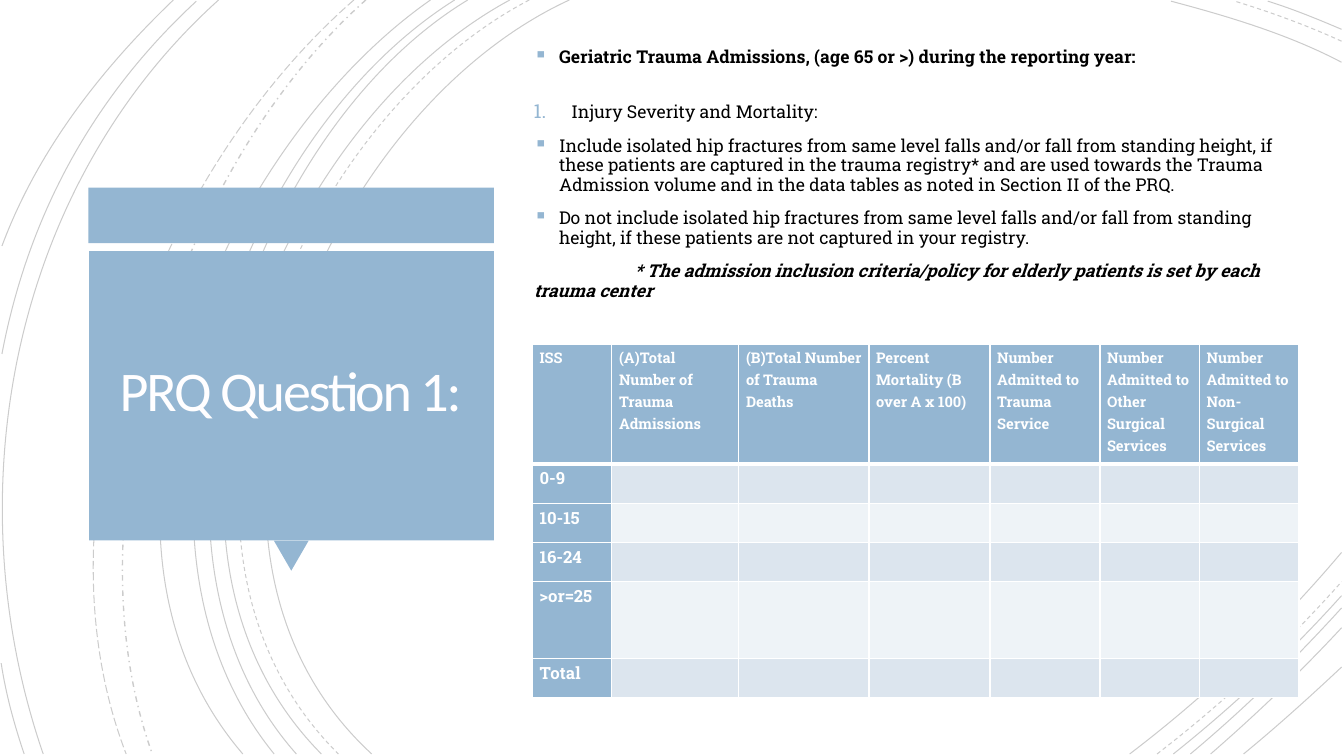
from dataclasses import dataclass

from lxml.etree import SubElement
from pptx import Presentation
from pptx.dml.color import RGBColor
from pptx.enum.dml import MSO_LINE_DASH_STYLE as Dash
from pptx.enum.shapes import MSO_SHAPE as Preset
from pptx.enum.text import MSO_ANCHOR as Anchor, PP_ALIGN as Align
from pptx.oxml.ns import qn
from pptx.util import Cm, Pt


@dataclass(frozen=True)
class Theme:
    """Colours, fonts and type sizes of the slide."""
    accent: str = "94B6D2"
    band_dark: str = "DCE5EE"
    band_light: str = "EEF3F7"
    white: str = "FFFFFF"
    ink: str = "000000"
    title_ink: str = "FFFEFF"
    title_font: str = "Calibri"
    body_font: str = "Roboto Slab"
    title_size: float = 40
    body_size: float = 12.6
    header_size: float = 10.5
    label_size: float = 12


def rgb(code):
    """Return the colour for a six-digit code."""
    return RGBColor.from_string(code)


class SlideBuilder:
    """Draws themed elements on one page."""

    def __init__(self, page, theme):
        """Keep the page and its theme."""
        self.page = page
        self.theme = theme

    def style(self, para, font, size, colour, bold=False, italic=False):
        """Format every run of a paragraph."""
        for span in para.runs:
            span.font.name = font
            span.font.size = Pt(size)
            span.font.color.rgb = rgb(colour)
            span.font.bold = bold
            span.font.italic = italic

    def arc(self, points, dash=Dash.SOLID, weight=0.75):
        """Draw a faint cubic curve through eight coordinates."""
        pairs = [(Cm(x), Cm(y)) for x, y in zip(points[::2], points[1::2])]
        builder = self.page.shapes.build_freeform(*pairs[0])
        builder.add_line_segments(pairs[1:], close=False)
        curve = builder.convert_to_shape()
        curve.shadow.inherit = False
        curve.fill.background()
        curve.line.color.rgb = rgb(self.theme.ink)
        curve.line.width = Pt(weight)
        curve.line.dash_style = dash
        tint = next(curve.element.iter(qn("a:srgbClr")))
        SubElement(tint, qn("a:alpha"), val="20000")
        segments = list(curve.element.iter(qn("a:lnTo")))
        outline = segments[0].getparent()
        bezier = SubElement(outline, qn("a:cubicBezTo"))
        for segment in segments:
            bezier.append(segment[0])
            outline.remove(segment)

    def block(self, preset, left, top, width, height, turn=0):
        """Draw a solid accent shape."""
        shape = self.page.shapes.add_shape(preset, Cm(left), Cm(top), Cm(width), Cm(height))
        shape.rotation = turn
        shape.shadow.inherit = False
        shape.fill.solid()
        shape.fill.fore_color.rgb = rgb(self.theme.accent)
        shape.line.fill.background()

    def frame(self, left, top, width, height):
        """Add a wrapping text box and return its text frame."""
        box = self.page.shapes.add_textbox(Cm(left), Cm(top), Cm(width), Cm(height))
        box.text_frame.word_wrap = True
        return box.text_frame

    def title(self, text, left, top, width, height):
        """Write the centred title."""
        frame = self.frame(left, top, width, height)
        frame.vertical_anchor = Anchor.MIDDLE
        frame.text = text
        para = frame.paragraphs[0]
        para.alignment = Align.CENTER
        para.line_spacing = 0.85
        self.style(para, self.theme.title_font, self.theme.title_size, self.theme.title_ink)
        para.runs[0].font._element.set("spc", "-150")

    def indent(self, para, margin, first, bullet=None):
        """Set the indents and, if given, the bullet of a paragraph."""
        props = para._p.get_or_add_pPr()
        props.set("marL", str(Cm(margin)))
        props.set("indent", str(Cm(first)))
        if bullet is None:
            SubElement(props, qn("a:buNone"))
            return
        colour = SubElement(props, qn("a:buClr"))
        SubElement(colour, qn("a:srgbClr"), val=self.theme.accent)
        SubElement(props, qn("a:buSzPct"), val="110000")
        if bullet == "1.":
            SubElement(props, qn("a:buAutoNum"), type="arabicPeriod")
        else:
            SubElement(props, qn("a:buChar"), char=bullet)

    def body(self, items, left, top, width, height):
        """Write the list of notes."""
        frame = self.frame(left, top, width, height)
        frame.text = "\n".join(item[0] for item in items)
        for para, (_, before, margin, first, bullet, bold, italic) in zip(frame.paragraphs, items):
            para.line_spacing = 0.92
            para.space_before = Pt(before)
            self.indent(para, margin, first, bullet)
            self.style(para, self.theme.body_font, self.theme.body_size,
                       self.theme.ink, bold, italic)

    def cell(self, cell, text, size, fill, top, bottom):
        """Fill one table cell and edge it in white."""
        cell.margin_left = cell.margin_right = Cm(0.18)
        cell.margin_top = cell.margin_bottom = 0
        cell.text = text
        para = cell.text_frame.paragraphs[0]
        para.line_spacing = 1.15
        self.style(para, self.theme.body_font, size, self.theme.white, bold=True)
        props = cell._tc.get_or_add_tcPr()
        for side, weight in (("L", 1), ("R", 1), ("T", top), ("B", bottom)):
            edge = SubElement(props, qn(f"a:ln{side}"), w=str(Pt(weight)))
            paint = SubElement(edge, qn("a:solidFill"))
            SubElement(paint, qn("a:srgbClr"), val=self.theme.white)
        cell.fill.solid()
        cell.fill.fore_color.rgb = rgb(fill)

    def table(self, headers, labels, widths, heights, left, top):
        """Draw the banded table with a header row and a label column."""
        theme = self.theme
        grid = self.page.shapes.add_table(len(heights), len(widths), Cm(left), Cm(top),
                                          Cm(sum(widths)), Cm(sum(heights))).table
        for column, width in zip(grid.columns, widths):
            column.width = Cm(width)
        for row, height in zip(grid.rows, heights):
            row.height = Cm(height)
        rows = [headers] + [[label] + [""] * (len(widths) - 1) for label in labels]
        for i, texts in enumerate(rows):
            band = theme.band_dark if i % 2 else theme.band_light
            for j, text in enumerate(texts):
                self.cell(grid.cell(i, j), text,
                          theme.label_size if i else theme.header_size,
                          band if i and j else theme.accent,
                          3 if i == 1 else 1, 1 if i else 3)


ARCS = [
    ((14.35, 0, 8, 2.92, 3.63, 13.72, 9.37, 19),),
    ((33.81, 1.57, 32.46, 0.86, 30.94, 0.41, 29.51, 0.03),),
    ((28.47, 19, 30.4, 17.53, 32.23, 15.8, 33.81, 13.92),),
    ((13.34, 0, 7.24, 3.18, 3.12, 13.64, 8.53, 19), Dash.DASH),
    ((33.81, 1.04, 32.94, 0.64, 32, 0.3, 31.12, 0.03), Dash.DASH),
    ((29.16, 19, 30.81, 17.73, 32.39, 16.26, 33.81, 14.66), Dash.DASH),
    ((12.85, 0, 6.86, 3.23, 2.79, 13.64, 8.1, 19),),
    ((33.81, 0.74, 33.2, 0.48, 32.59, 0.23, 31.95, 0.03),),
    ((29.57, 19, 31.06, 17.81, 32.51, 16.46, 33.81, 15.01),),
    ((11.79, 0, 6.2, 3.38, 2.79, 13.74, 7.47, 19),),
    ((30, 19, 31.34, 17.88, 32.61, 16.64, 33.81, 15.32),),
    ((11.46, 0, 5.87, 3.51, 2.46, 13.54, 6.91, 19),),
    ((30.51, 19, 31.65, 18.01, 32.77, 16.94, 33.81, 15.82),),
    ((10.85, 0, 5.51, 3.73, 1.35, 13.44, 6.12, 19),),
    ((31.34, 19, 32.18, 18.31, 32.99, 17.58, 33.81, 16.81),),
    ((9.22, 0, 4.47, 4.22, 1.65, 12.93, 3.84, 19), Dash.DASH_DOT, 1),
    ((8.92, 0, 3.99, 4.29, 0.74, 12.67, 3.18, 19), Dash.LONG_DASH),
    ((5.51, 0, 0.28, 4.7, -1.17, 12.45, 1.09, 19),),
    ((4.95, 0.03, 2.34, 2.44, 0.71, 5.44, 0.05, 8.92),),
    ((0.03, 16.71, 0.15, 17.5, 0.36, 18.26, 0.61, 19),),
    ((4.37, 0, 2.54, 1.75, 0.94, 3.81, 0.05, 6.2),),
]
NOTES = [
    ("Geriatric Trauma Admissions, (age 65 or >) during the reporting year:", 0, 0.64, -0.64, "▪", True, False),
    ("Injury Severity and Mortality:", 25.4, 0.95, -0.95, "1.", False, False),
    ("Include isolated hip fractures from same level falls and/or fall from standing height, if these patients are captured in the trauma registry* and are used towards the Trauma Admission volume and in the data tables as noted in Section II of the PRQ.", 10, 0.64, -0.64, "▪", False, False),
    ("Do not include isolated hip fractures from same level falls and/or fall from standing height, if these patients are not captured in your registry.", 10, 0.64, -0.64, "▪", False, False),
    ("* The admission inclusion criteria/policy for elderly patients is set by each trauma center", 10, 0, 2.54, None, True, True),
]
HEADERS = ["ISS", "(A)Total Number of Trauma Admissions", "(B)Total Number of Trauma Deaths",
           "Percent Mortality (B over A x 100)", "Number Admitted to Trauma Service",
           "Number Admitted to Other Surgical Services", "Number Admitted to Non-Surgical Services"]
SCORES = ["0-9", "10-15", "16-24", ">or=25", "Total"]


def main():
    """Build the slide and save the deck."""
    deck = Presentation()
    deck.slide_width, deck.slide_height = Cm(33.87), Cm(19.05)
    builder = SlideBuilder(deck.slides.add_slide(deck.slide_layouts[6]), Theme())
    for arc in ARCS:
        builder.arc(*arc)
    builder.block(Preset.RECTANGLE, 2.23, 4.73, 10.22, 1.4)
    builder.block(Preset.ISOSCELES_TRIANGLE, 6.9, 13.62, 0.88, 0.76, turn=180)
    builder.block(Preset.RECTANGLE, 2.25, 6.33, 10.2, 7.29)
    builder.title("PRQ Question 1:", 2.46, 6.5, 9.73, 6.86)
    builder.body(NOTES, 13.2, 1.09, 19.76, 7.77)
    builder.table(HEADERS, SCORES, [2, 3.2, 3.28, 3.05, 2.77, 2.51, 2.51],
                  [3, 0.99, 0.99, 0.99, 1.93, 0.99], 13.42, 8.69)
    deck.save("out.pptx")


if __name__ == "__main__":
    main()
